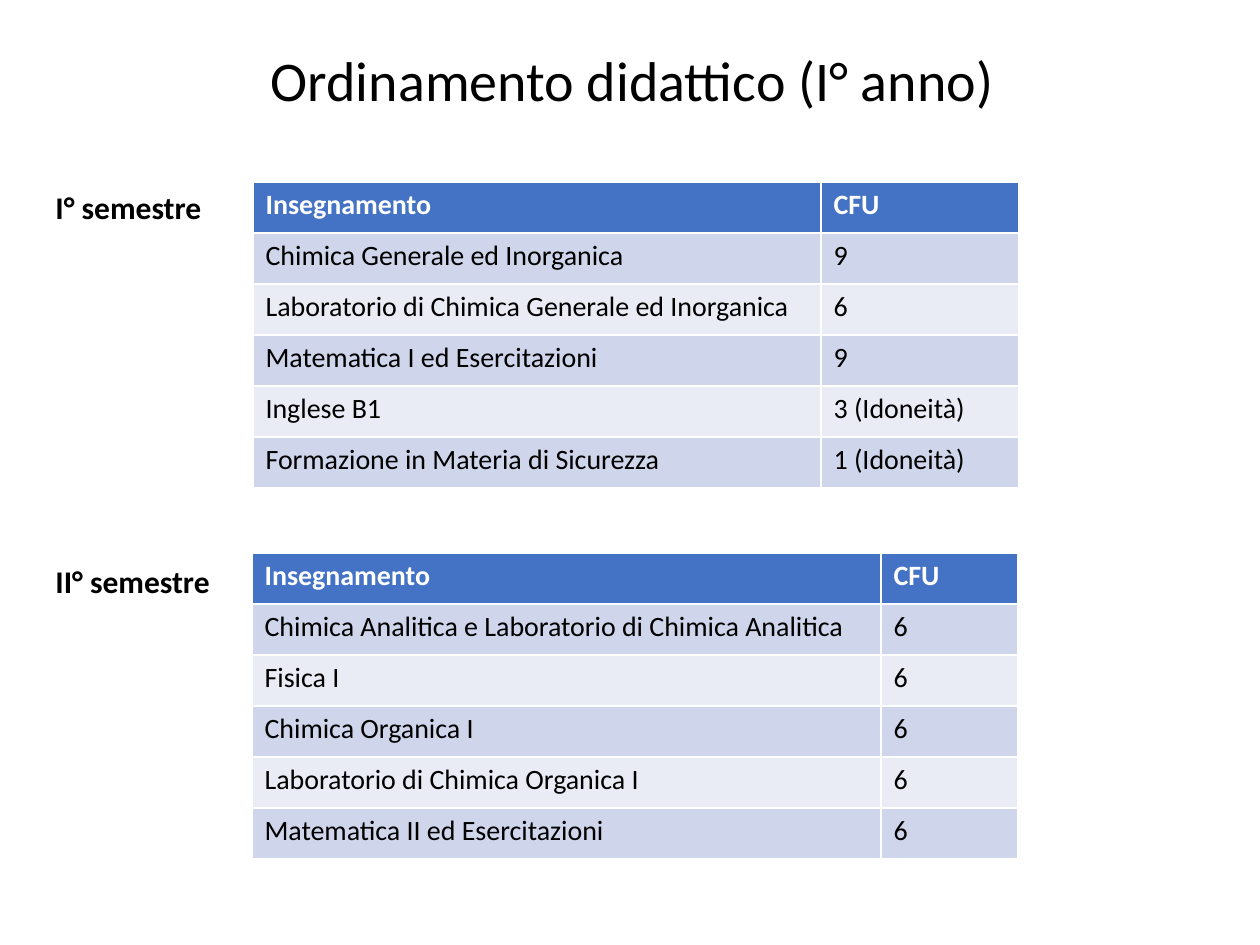
import pptx
import pptx.dml.color
import pptx.enum.text
import pptx.util

SCALE = 914400 / 126
FONT = "Calibri"
BLACK = pptx.dml.color.RGBColor(0x00, 0x00, 0x00)
WHITE = pptx.dml.color.RGBColor(0xFF, 0xFF, 0xFF)
HEADER_BLUE = pptx.dml.color.RGBColor(0x44, 0x72, 0xC4)
BAND_DARK = pptx.dml.color.RGBColor(0xCF, 0xD5, 0xEA)
BAND_LIGHT = pptx.dml.color.RGBColor(0xE9, 0xEB, 0xF5)
ROW_HEIGHT = 51
HEADER = ("Insegnamento", "CFU")
FIRST_COURSES = [
    ("Chimica Generale ed Inorganica", "9"),
    ("Laboratorio di Chimica Generale ed Inorganica", "6"),
    ("Matematica I ed Esercitazioni", "9"),
    ("Inglese B1", "3 (Idoneità)"),
    ("Formazione in Materia di Sicurezza", "1 (Idoneità)"),
]
SECOND_COURSES = [
    ("Chimica Analitica e Laboratorio di Chimica Analitica", "6"),
    ("Fisica I", "6"),
    ("Chimica Organica I", "6"),
    ("Laboratorio di Chimica Organica I", "6"),
    ("Matematica II ed Esercitazioni", "6"),
]


def px(length):
    """Turn pixels into EMU."""
    return pptx.util.Emu(round(length * SCALE))


def write(frame, text, size, color=BLACK, bold=False):
    """Write one formatted paragraph and return it."""
    frame.text = text
    para = frame.paragraphs[0]
    for span in para.runs:
        span.font.name = FONT
        span.font.size = pptx.util.Pt(size)
        span.font.bold = bold
        span.font.color.rgb = color
    return para


def fit_to_text(frame):
    """Keep the text on one line in a box that grows with it."""
    frame.word_wrap = False
    frame.auto_size = pptx.enum.text.MSO_AUTO_SIZE.SHAPE_TO_FIT_TEXT


def add_title(page, text, left, top, width, height):
    """Move and fill the title placeholder."""
    title = page.shapes.title
    title.left, title.top = px(left), px(top)
    title.width, title.height = px(width), px(height)
    para = write(title.text_frame, text, 32)
    para.alignment = pptx.enum.text.PP_ALIGN.CENTER
    fit_to_text(title.text_frame)


def add_label(page, text, left, top, width, height):
    """Add the bold name of a semester."""
    box = page.shapes.add_textbox(px(left), px(top), px(width), px(height))
    write(box.text_frame, text, 18, bold=True)
    fit_to_text(box.text_frame)


def add_courses(page, courses, left, top, widths):
    """Add the banded table of courses and credits."""
    rows = [HEADER, *courses]
    table = page.shapes.add_table(
        len(rows), len(widths), px(left), px(top),
        px(sum(widths)), px(ROW_HEIGHT * len(rows)),
    ).table
    for column, width in zip(table.columns, widths):
        column.width = px(width)
    for index, values in enumerate(rows):
        table.rows[index].height = px(ROW_HEIGHT)
        is_header = index == 0
        band = BAND_DARK if index % 2 else BAND_LIGHT
        for cell, value in zip(table.rows[index].cells, values):
            cell.fill.solid()
            cell.fill.fore_color.rgb = HEADER_BLUE if is_header else band
            write(cell.text_frame, value, 16, WHITE if is_header else BLACK, is_header)


def main():
    """Build and save the slide."""
    deck = pptx.Presentation()
    deck.slide_width, deck.slide_height = px(1260), px(945)
    page = deck.slides.add_slide(deck.slide_layouts[5])
    add_title(page, "Ordinamento didattico (I° anno)", 253, 39, 759, 81)
    add_courses(page, FIRST_COURSES, 253, 182, (568, 198))
    add_courses(page, SECOND_COURSES, 252, 553, (629, 137))
    add_label(page, "I° semestre", 43, 182, 173, 50)
    add_label(page, "II° semestre", 43, 556, 180, 50)
    deck.save("out.pptx")


if __name__ == "__main__":
    main()
